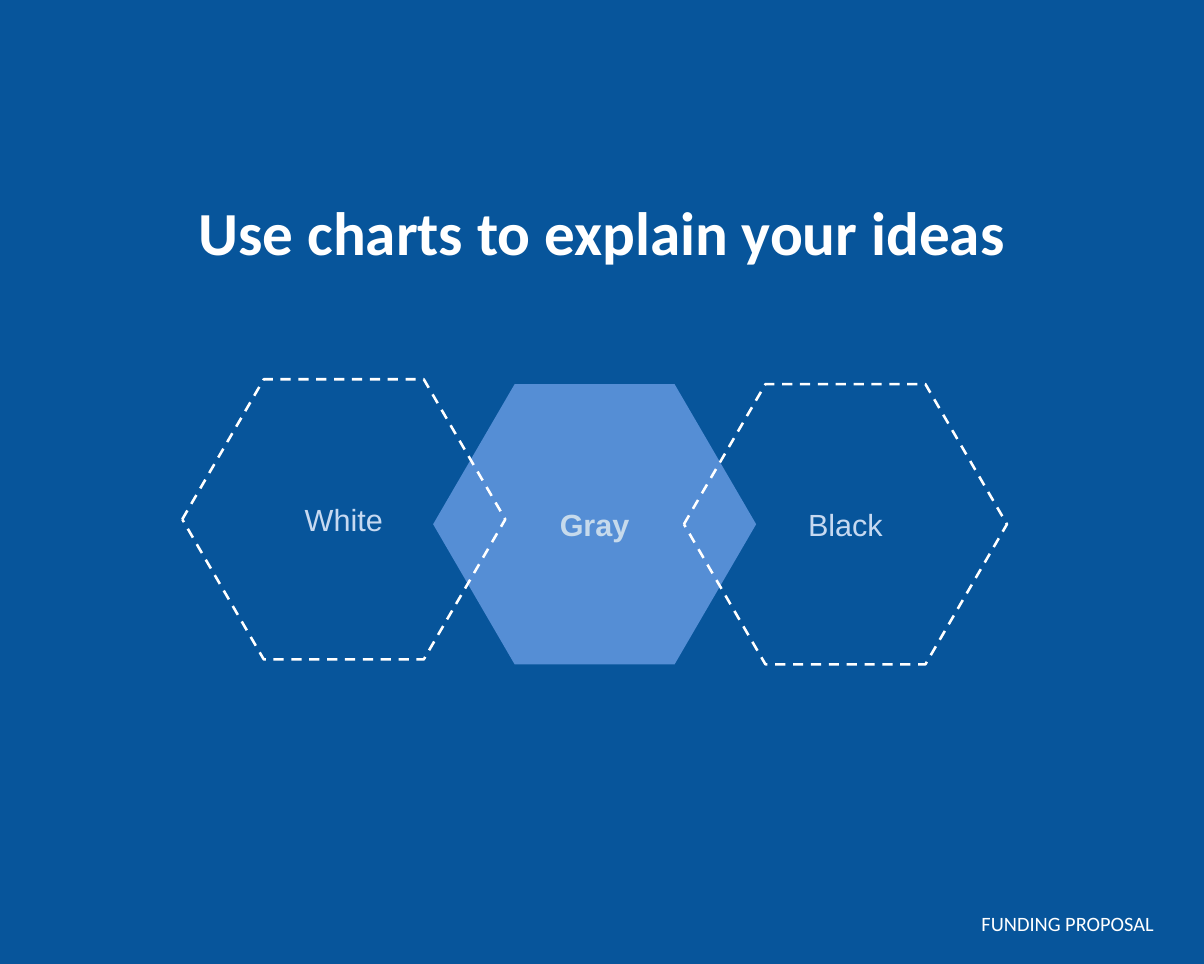
from pptx import Presentation
from pptx import util as u
from pptx.dml.color import RGBColor
from pptx.enum import dml, shapes, text

WIDTH, HEIGHT = 9.84, 7.88


def color(value):
    return RGBColor.from_string(value)


def write(tf, words, size, font, value, align, bold=False):
    p = tf.paragraphs[0]
    p.alignment = align
    r = p.add_run()
    r.text = words
    r.font.size = u.Pt(size)
    r.font.name = font
    r.font.bold = bold
    r.font.color.rgb = color(value)


def place(sp, box):
    sp.left, sp.top, sp.width, sp.height = [u.Inches(n) for n in box]


def add_title(s, box):
    sp = s.shapes.title
    place(sp, box)
    tf = sp.text_frame
    tf.word_wrap = True
    tf.vertical_anchor = text.MSO_ANCHOR.TOP
    write(tf, "Use charts to explain your ideas", 36, "Calibri", "FFFFFF",
          text.PP_ALIGN.CENTER, True)


def add_footer(s, box):
    sp = s.shapes.add_textbox(*[u.Inches(n) for n in box])
    tf = sp.text_frame
    tf.word_wrap = False
    tf.auto_size = text.MSO_AUTO_SIZE.SHAPE_TO_FIT_TEXT
    write(tf, "FUNDING PROPOSAL", 12, "Calibri", "FFFFFF", text.PP_ALIGN.RIGHT)


def add_hexagon(s, box, label, value, fill=None):
    sp = s.shapes.add_shape(shapes.MSO_SHAPE.HEXAGON, *[u.Inches(n) for n in box])
    sp.adjustments[0] = 0.291
    sp.adjustments[1] = 1.155
    sp.shadow.inherit = False
    if fill:
        sp.fill.solid()
        sp.fill.fore_color.rgb = color(fill)
        sp.line.fill.background()
    else:
        sp.fill.background()
        sp.line.color.rgb = color("FFFFFF")
        sp.line.width = u.Pt(1.5)
        sp.line.dash_style = dml.MSO_LINE.DASH
    tf = sp.text_frame
    tf.word_wrap = True
    tf.vertical_anchor = text.MSO_ANCHOR.MIDDLE
    tf.margin_left = tf.margin_right = tf.margin_top = tf.margin_bottom = u.Inches(0.1)
    write(tf, label, 18, "Arial", value, text.PP_ALIGN.CENTER, bool(fill))


def add_hexagon_chain(s, box):
    left, top, width, height = box
    cell, step, lift = 2.64, (width - 2.64) / 2, 0.04
    hexagons = [
        (1, lift, "Gray", "C6DAEC", "558ED5"),
        (0, 0, "White", "C6D9F1", None),
        (2, lift, "Black", "C6D9F1", None),
    ]
    for column, drop, label, value, fill in hexagons:
        place_box = (left + column * step, top + drop, cell, height - lift)
        add_hexagon(s, place_box, label, value, fill)


def main():
    prs = Presentation()
    prs.slide_width, prs.slide_height = u.Inches(WIDTH), u.Inches(HEIGHT)
    s = prs.slides.add_slide(prs.slide_layouts[5])
    s.background.fill.solid()
    s.background.fill.fore_color.rgb = color("07559B")
    add_footer(s, (7.9, 7.4, 1.63, 0.3))
    add_title(s, (0.74, 1.54, 8.36, 1.05))
    add_hexagon_chain(s, (1.49, 3.1, 6.74, 2.33))
    prs.save("out.pptx")


if __name__ == "__main__":
    main()
